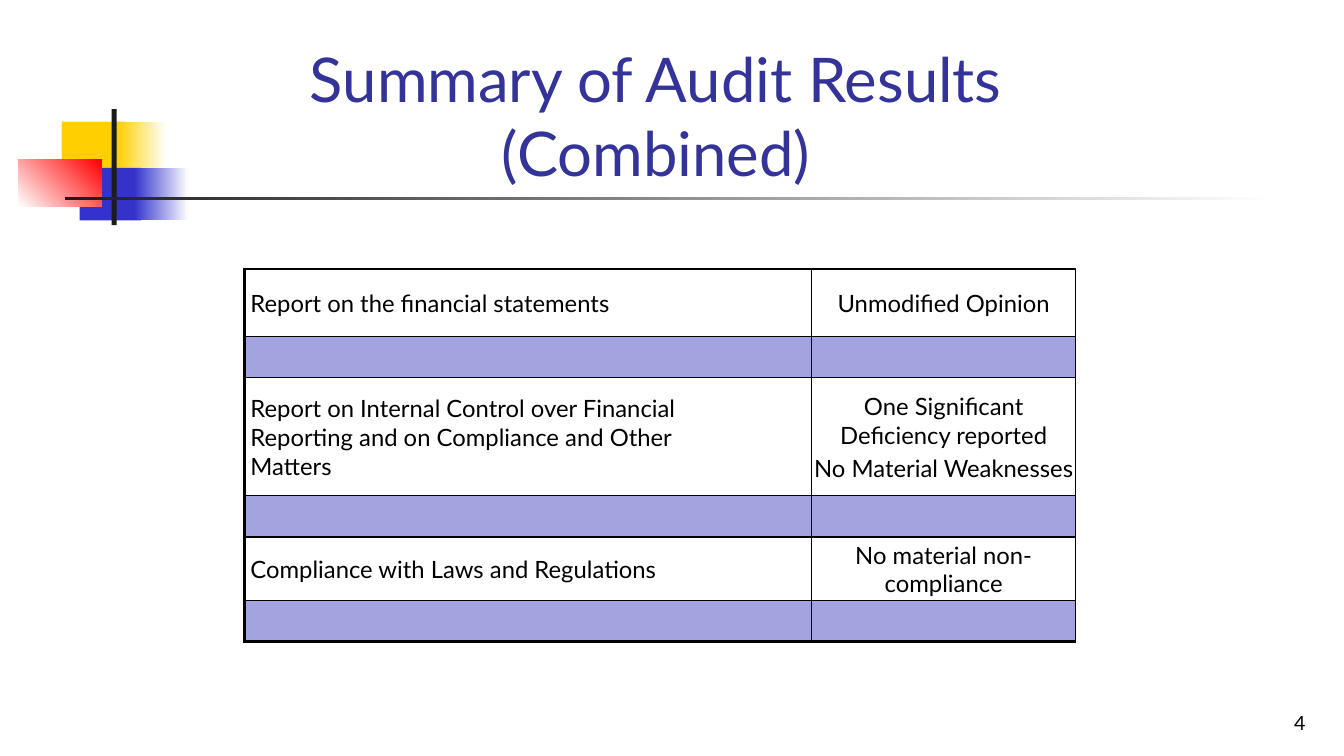
from lxml import etree
from pptx import Presentation
from pptx.dml.color import RGBColor
from pptx.enum import shapes, text
from pptx.oxml import ns
from pptx.util import Pt

FONT = "Lato"
BLACK, WHITE, INK = "000000", "FFFFFF", "1C1C1C"
YELLOW, BLUE, RED = "FFCF01", "3333CC", "FF0000"
NAVY, LAVENDER = "333399", "A3A3E0"
LEFT, CENTER, RIGHT = text.PP_ALIGN.LEFT, text.PP_ALIGN.CENTER, text.PP_ALIGN.RIGHT

COLUMN_WIDTHS = [405.4, 188.6]
REPORT_HEIGHTS = [48.3, 84.3, 45.3]
SPACER_HEIGHT = 29.4
REPORTS = [
    (["Report on the financial statements"], ["Unmodified Opinion"]),
    (["Report on Internal Control over Financial",
      "Reporting and on Compliance and Other",
      "Matters"],
     ["One Significant Deficiency reported", "No Material Weaknesses"]),
    (["Compliance with Laws and Regulations"], ["No material non-compliance"]),
]


def color(value):
    return RGBColor.from_string(value)


def write(frame, lines, size, ink, align, gap=0):
    """Fill a text frame with one paragraph per line, gap points apart."""
    frame.word_wrap = True
    for index, line in enumerate(lines):
        paragraph = frame.paragraphs[0] if index == 0 else frame.add_paragraph()
        paragraph.alignment = align
        if index < len(lines) - 1:
            paragraph.space_after = Pt(gap)
        run = paragraph.add_run()
        run.text = line
        run.font.name = FONT
        run.font.size = Pt(size)
        run.font.color.rgb = color(ink)


def add_label(slide, box, line, size, ink, align):
    frame = slide.shapes.add_textbox(*map(Pt, box)).text_frame
    frame.vertical_anchor = text.MSO_ANCHOR.BOTTOM
    write(frame, [line], size, ink, align)


def add_block(slide, box, start, end=None, angle=0):
    """Add a rectangle, plain or fading from start to end."""
    block = slide.shapes.add_shape(shapes.MSO_SHAPE.RECTANGLE, *map(Pt, box))
    block.shadow.inherit = False
    block.line.fill.background()
    if end is None:
        block.fill.solid()
        block.fill.fore_color.rgb = color(start)
        return
    block.fill.gradient()
    block.fill.gradient_angle = angle
    for stop, shade in zip(block.fill.gradient_stops, (start, end)):
        stop.color.rgb = color(shade)


def add_ornament(slide, left, top, width):
    """Draw the coloured blocks, the upright bar and the fading rule."""
    def place(x, y, w, h, *shades):
        add_block(slide, (left + x, top + y, w, h), *shades)

    place(30.6, 8.8, 45.8, 37.4, YELLOW)
    place(70.6, 8.8, 34.6, 37.4, YELLOW, WHITE)
    place(43.4, 42, 43.9, 37.4, BLUE)
    place(82.4, 42, 38.9, 37.4, BLUE, WHITE)
    place(0, 36, 59.2, 33.8, WHITE, RED, 45)
    place(66.4, 0, 3.6, 82.8, INK)
    place(33, 62.4, width - 33, 2.5, INK, WHITE)


def set_borders(cell, widths):
    """Line the sides of a cell; widths maps L, R, T and B to points."""
    properties = cell._tc.get_or_add_tcPr()
    for index, side in enumerate("LRTB"):
        line = etree.Element(ns.qn(f"a:ln{side}"), w=str(Pt(widths[side])))
        fill = etree.SubElement(line, ns.qn("a:solidFill"))
        etree.SubElement(fill, ns.qn("a:srgbClr"), val=BLACK)
        properties.insert(index, line)


def add_results(slide, left, top):
    """Draw the audit results, each followed by a lavender spacer row."""
    heights = [h for report in REPORT_HEIGHTS for h in (report, SPACER_HEIGHT)]
    frame = slide.shapes.add_table(
        len(heights), len(COLUMN_WIDTHS), Pt(left), Pt(top),
        Pt(sum(COLUMN_WIDTHS)), Pt(sum(heights)))
    results = frame.table
    results.first_row = results.horz_banding = False
    for column, width in zip(results.columns, COLUMN_WIDTHS):
        column.width = Pt(width)
    for r, height in enumerate(heights):
        results.rows[r].height = Pt(height)
        for c in range(len(COLUMN_WIDTHS)):
            cell = results.cell(r, c)
            cell.vertical_anchor = text.MSO_ANCHOR.MIDDLE
            cell.margin_left = Pt(4.5 if c == 0 else 0.7)
            cell.margin_right = cell.margin_top = Pt(0.7)
            cell.margin_bottom = 0
            if r % 2:
                cell.fill.solid()
                cell.fill.fore_color.rgb = color(LAVENDER)
            else:
                cell.fill.background()
                write(cell.text_frame, REPORTS[r // 2][c], 17, BLACK,
                      CENTER if c else LEFT, 3 if c else 0)
            set_borders(cell, {"L": 1 if c else 2.25, "R": 1, "T": 1,
                               "B": 2.25 if r == len(heights) - 1 else 1})


def build_summary(slide):
    add_ornament(slide, 13.4, 78, 896.6)
    add_label(slide, (162, 23, 613.4, 115.2),
              "Summary of Audit Results (Combined)", 44, NAVY, CENTER)
    add_label(slide, (739.4, 491.8, 200.2, 36), "4", 14, BLACK, RIGHT)
    add_results(slide, 174.4, 192.2)


def main():
    deck = Presentation()
    deck.slide_width, deck.slide_height = Pt(960), Pt(540)
    build_summary(deck.slides.add_slide(deck.slide_layouts[6]))
    deck.save("out.pptx")


if __name__ == "__main__":
    main()
